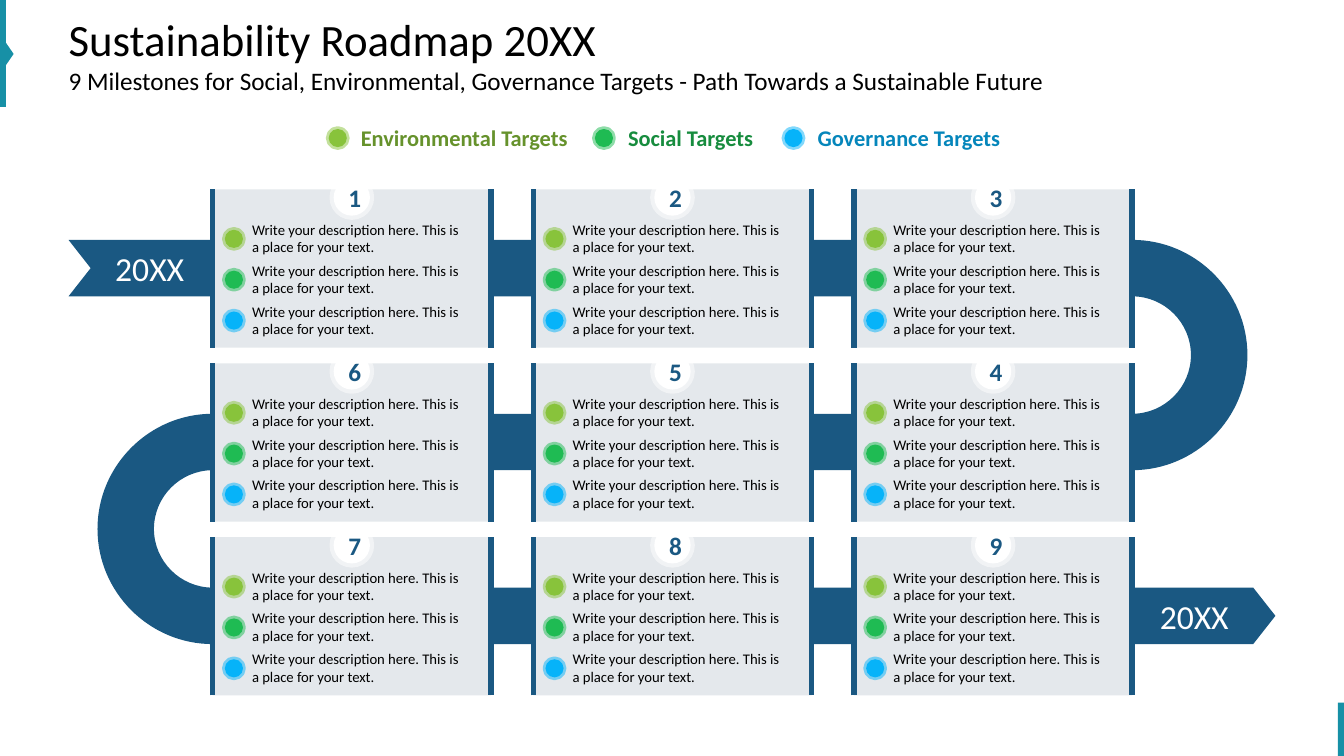
from lxml.etree import SubElement
from pptx import Presentation
from pptx.dml.color import RGBColor
from pptx.enum.shapes import MSO_SHAPE
from pptx.enum.text import MSO_ANCHOR, PP_ALIGN
from pptx.oxml.ns import qn
from pptx.util import Inches, Pt

NAVY, TEAL, CARD_GREY, WHITE, BLACK = "1A5882", "1790A6", "E4E8EC", "FFFFFF", "000000"
TARGETS = [  # label, dot colour, label colour, dot left, label width
    ("Environmental Targets", "88C33B", "66922C", 3.26, 2.33),
    ("Social Targets", "1FBB53", "178C3E", 5.9, 1.54),
    ("Governance Targets", "06B3F9", "0586BB", 7.78, 2.11),
]
DESCRIPTION = ["Write your description here. This is ", "a place for your text."]
MILESTONES = [[1, 2, 3], [6, 5, 4], [7, 8, 9]]

# Grid of cards and the ribbon behind it
GRID_LEFT, GRID_TOP = 2.11, 1.88
CARD_WIDTH, CARD_HEIGHT = 2.76, 1.57
COLUMN_STEP, ROW_STEP = 3.18, 1.725
GRID_RIGHT = GRID_LEFT + 2 * COLUMN_STEP + CARD_WIDTH
RIBBON_LEFT, RIBBON_RIGHT, RIBBON_HALF, ARROW_DEPTH = 0.68, 12.65, 0.28, 0.22
DOT_SIZE, BADGE_SIZE, BULLET_STEP = 0.18, 0.36, 0.405
CURVE = 0.55  # handle length of a quarter circle, as a share of its radius


def color(hex_value):
    return RGBColor.from_string(hex_value)


def apply_format(target, values):
    for name, value in values.items():
        setattr(target, name, value)


def style_shape(shape, fill, line=None, line_width=0, line_alpha=None):
    shape.shadow.inherit = False
    shape.fill.solid()
    shape.fill.fore_color.rgb = color(fill)
    if line is None:
        shape.line.fill.background()
        return
    shape.line.color.rgb = color(line)
    shape.line.width = Pt(line_width)
    if line_alpha:
        line_color = next(shape.line._get_or_add_ln().iter(qn("a:srgbClr")))
        SubElement(line_color, qn("a:alpha")).set("val", str(line_alpha * 1000))


def add_preset(slide, preset, box, *style):
    shape = slide.shapes.add_shape(preset, *map(Inches, box))
    style_shape(shape, *style)
    return shape


def set_frame(shape, margins, anchor=MSO_ANCHOR.MIDDLE):
    left, top, right, bottom = map(Inches, margins)
    apply_format(shape.text_frame, {
        "margin_left": left, "margin_top": top,
        "margin_right": right, "margin_bottom": bottom,
        "vertical_anchor": anchor, "word_wrap": True,
    })
    return shape.text_frame


def write(paragraph, lines, text_color, sizes, bold=False, align=PP_ALIGN.LEFT, space_after=0):
    apply_format(paragraph, {"alignment": align, "space_after": Pt(space_after)})
    for index, (line, size) in enumerate(zip(lines, sizes)):
        if index:
            paragraph.add_line_break()
        run = paragraph.add_run()
        run.text = line
        apply_format(run.font, {"name": "Calibri", "size": Pt(size), "bold": bold})
        run.font.color.rgb = color(text_color)


def add_label(slide, box, text, text_color, size, margins, bold=False, space_after=0):
    label = slide.shapes.add_textbox(*map(Inches, box))
    frame = set_frame(label, margins)
    write(frame.paragraphs[0], [text], text_color, [size], bold, PP_ALIGN.CENTER, space_after)


def add_dot(slide, left, top, fill):
    add_preset(slide, MSO_SHAPE.OVAL, (left, top, DOT_SIZE, DOT_SIZE), fill, fill, 4, 50)


def add_edge_marks(slide):
    add_preset(slide, MSO_SHAPE.RECTANGLE, (0, 0, 0.06, 1.06), TEAL)
    pointer = add_preset(slide, MSO_SHAPE.ISOSCELES_TRIANGLE, (-0.08, 0.48, 0.32, 0.11), TEAL)
    pointer.rotation = 90
    add_preset(slide, MSO_SHAPE.RECTANGLE, (13.27, 6.97, 0.06, 0.53), TEAL)


def add_title(slide, box):
    title = slide.shapes.title
    left, top, width, height = map(Inches, box)
    apply_format(title, {"left": left, "top": top, "width": width, "height": height})
    frame = set_frame(title, (0, 0.05, 0.1, 0.05))
    write(frame.paragraphs[0], [
        "Sustainability Roadmap 20XX",
        "9 Milestones for Social, Environmental, Governance Targets"
        " - Path Towards a Sustainable Future",
    ], BLACK, [32, 18])


def add_legend(slide, top):
    for text, dot_color, text_color, left, width in TARGETS:
        add_dot(slide, left, top + 0.1, dot_color)
        add_label(slide, (left + DOT_SIZE, top, width, 0.37), text, text_color, 16,
                  (0, 0, 0, 0), bold=True)


def half_circle(center_x, center_y, radius_x, radius_y):
    """Line to one end, then two quarter circles; a negative radius turns the bend round."""
    return [(center_x, center_y - radius_y, "line"),
            (center_x + radius_x, center_y, "leave level"),
            (center_x, center_y + radius_y, "arrive level")]


def bend_segments(shape, kinds):
    """Turn the marked straight segments of a freeform into quarter circles."""
    points = [(int(point.get("x")), int(point.get("y")))
              for point in shape._element.iter(qn("a:pt"))]
    segments = list(shape._element.iter(qn("a:lnTo")))
    for segment, kind, (x1, y1), (x2, y2) in zip(segments, kinds, points, points[1:]):
        if kind == "line":
            continue
        step_x, step_y = round(CURVE * (x2 - x1)), round(CURVE * (y2 - y1))
        if kind == "leave level":
            handles = [(x1 + step_x, y1), (x2, y2 - step_y)]
        else:
            handles = [(x1, y1 + step_y), (x2 - step_x, y2)]
        segment.tag = qn("a:cubicBezTo")
        for position, (x, y) in enumerate(handles):
            handle = segment.makeelement(qn("a:pt"), {"x": str(x), "y": str(y)})
            segment.insert(position, handle)


def add_ribbon(slide):
    first, second, third = [GRID_TOP + 0.78 + row * ROW_STEP for row in range(3)]
    outer, inner = ROW_STEP / 2 + RIBBON_HALF, ROW_STEP / 2 - RIBBON_HALF
    right_bend = (GRID_RIGHT, (first + second) / 2)
    left_bend = (GRID_LEFT, (second + third) / 2)
    shoulder = RIBBON_RIGHT - ARROW_DEPTH
    outline = [
        (RIBBON_LEFT, first - RIBBON_HALF, "line"),
        *half_circle(*right_bend, outer, outer),
        *half_circle(*left_bend, -inner, inner),
        (shoulder, third - RIBBON_HALF, "line"),
        (RIBBON_RIGHT, third, "line"),
        (shoulder, third + RIBBON_HALF, "line"),
        *half_circle(*left_bend, -outer, -outer),
        *half_circle(*right_bend, inner, -inner),
        (RIBBON_LEFT, first + RIBBON_HALF, "line"),
        (RIBBON_LEFT + ARROW_DEPTH, first, "line"),
    ]
    points = [(Inches(x), Inches(y)) for x, y, kind in outline]
    builder = slide.shapes.build_freeform(*points[0])
    builder.add_line_segments(points[1:], close=True)
    ribbon = builder.convert_to_shape()
    bend_segments(ribbon, [kind for x, y, kind in outline[1:]])
    style_shape(ribbon, NAVY)

    # Start and end years
    for left, middle in ((0.9, first), (11.26, third)):
        add_label(slide, (left, middle - 0.27, 1.17, 0.54), "20XX", WHITE, 24,
                  (0.16, 0.12, 0.16, 0.12), space_after=6)


def add_milestone(slide, left, top, number):
    card = add_preset(slide, MSO_SHAPE.DOUBLE_BRACKET, (left, top, CARD_WIDTH, CARD_HEIGHT),
                      CARD_GREY, NAVY, 4)
    card.adjustments[0] = 0
    frame = set_frame(card, (0.39, 0.31, 0.12, 0.04), MSO_ANCHOR.TOP)
    for index, target in enumerate(TARGETS):
        paragraph = frame.add_paragraph() if index else frame.paragraphs[0]
        write(paragraph, DESCRIPTION, BLACK, [10.5, 10.5], space_after=4)
        add_dot(slide, left + 0.12, top + 0.4 + index * BULLET_STEP, target[1])

    # Number badge
    badge = add_preset(slide, MSO_SHAPE.OVAL,
                       (left + (CARD_WIDTH - BADGE_SIZE) / 2, top - 0.1, BADGE_SIZE, BADGE_SIZE),
                       WHITE, WHITE, 6, 50)
    badge_frame = set_frame(badge, (0.06, 0, 0, 0))
    write(badge_frame.paragraphs[0], [str(number)], NAVY, [18], True, PP_ALIGN.CENTER)


def main():
    presentation = Presentation()
    presentation.slide_width, presentation.slide_height = Inches(13.33), Inches(7.5)
    slide = presentation.slides.add_slide(presentation.slide_layouts[5])
    add_edge_marks(slide)
    add_title(slide, (0.68, 0, 11.97, 1.06))
    add_legend(slide, 1.18)
    add_ribbon(slide)
    for row, numbers in enumerate(MILESTONES):
        for column, number in enumerate(numbers):
            add_milestone(slide, GRID_LEFT + column * COLUMN_STEP,
                          GRID_TOP + row * ROW_STEP, number)
    presentation.save("out.pptx")


if __name__ == "__main__":
    main()
